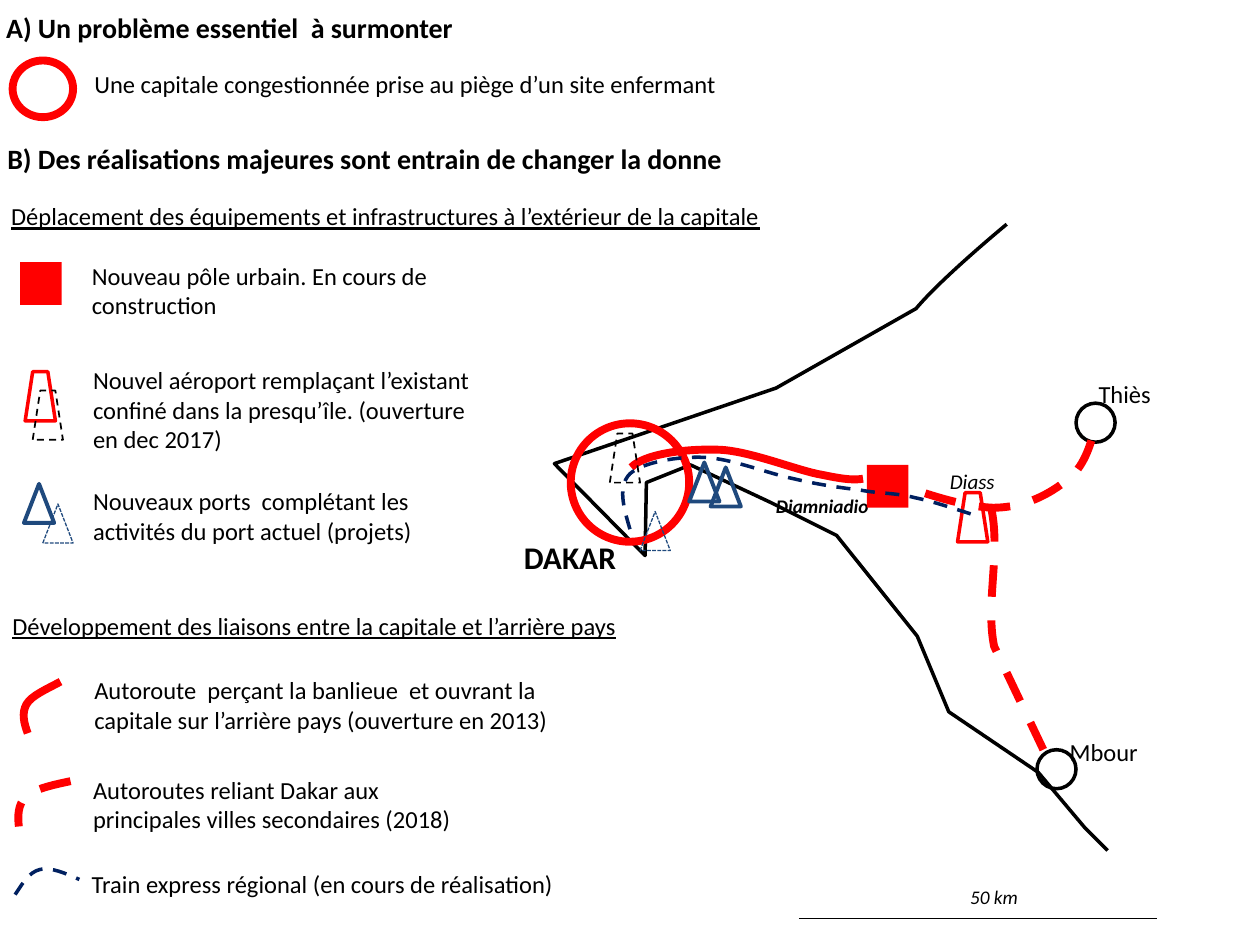
from lxml.etree import SubElement
from pptx import Presentation
from pptx.dml.color import RGBColor
from pptx.enum.dml import MSO_LINE
from pptx.enum.shapes import MSO_CONNECTOR, MSO_SHAPE
from pptx.enum.text import MSO_AUTO_SIZE
from pptx.oxml.ns import qn
from pptx.util import Inches, Pt

# The slide is a grid of 100 columns by 75 rows; all lengths are in cells
WIDTH, HEIGHT = Inches(10), Inches(7.5)
CELL = WIDTH / 100
COLORS = {"black": "000000", "red": "FF0000", "blue": "1F497D", "navy": "002060"}

# Line styles: colour, width in points, dash
COAST = ("black", 2, None)
ROAD = ("red", 4.5, None)
ROAD_DASH = ("red", 4.5, MSO_LINE.DASH)
TRAIN = ("navy", 2, MSO_LINE.DASH)
NEW_AIRPORT = ("red", 2, None)
OLD_AIRPORT = ("black", 1, MSO_LINE.DASH)
NEW_PORT = ("blue", 2.25, None)
OLD_PORT = ("blue", 0.75, MSO_LINE.SQUARE_DOT)
SCALE_BAR = ("black", 0.75, None)

# Symbols shared by the map and the legend: preset, width, height
CITY = (MSO_SHAPE.OVAL, 3.1, 3.1)
AIRPORT = (MSO_SHAPE.TRAPEZOID, 2.4, 3.9)
PORT = (MSO_SHAPE.ISOSCELES_TRIANGLE, 2.4, 3.1)
POLE = (MSO_SHAPE.RECTANGLE, 3.3, 3.4)


def cells(n):
    return round(n * CELL)


def rgb(name):
    return RGBColor.from_string(COLORS[name])


def style_line(line, style):
    color, width, dash = style
    line.color.rgb = rgb(color)
    line.width = Pt(width)
    if dash:
        line.dash_style = dash


def add_symbol(s, kind, x, y, style=None, fill=None):
    preset, w, h = kind
    sp = s.shapes.add_shape(preset, *map(cells, (x, y, w, h)))
    sp.shadow.inherit = False
    if fill:
        sp.fill.solid()
        sp.fill.fore_color.rgb = rgb(fill)
    else:
        sp.fill.background()
    if style:
        style_line(sp.line, style)
    else:
        sp.line.fill.background()


def bezier(p0, p1, p2, p3):
    """Points along a cubic curve, used to find its extent."""
    for i in range(21):
        t = i / 20
        u = 1 - t
        yield tuple(u**3 * a + 3 * u * u * t * b + 3 * u * t * t * c + t**3 * d
                    for a, b, c, d in zip(p0, p1, p2, p3))


def add_route(s, start, steps, style):
    """A step of 2 numbers is a straight line, one of 6 a cubic curve."""
    nodes = [start] + [step[-2:] for step in steps]
    builder = s.shapes.build_freeform(*map(cells, start))
    builder.add_line_segments([tuple(map(cells, n)) for n in nodes[1:]], close=False)
    sp = builder.convert_to_shape()

    # Fit the frame to the curves
    extent = list(nodes)
    for node, step in zip(nodes, steps):
        if len(step) == 6:
            extent.extend(bezier(node, step[:2], step[2:4], step[4:]))
    xs, ys = zip(*extent)
    sp.left, sp.top = cells(min(xs)), cells(min(ys))
    sp.width, sp.height = cells(max(xs) - min(xs)), cells(max(ys) - min(ys))

    # Write the outline with true curves
    outline = sp._element.spPr.find(".//" + qn("a:path"))
    for child in list(outline):
        outline.remove(child)
    outline.set("w", str(sp.width))
    outline.set("h", str(sp.height))
    tags = {2: "a:lnTo", 6: "a:cubicBezTo"}
    for tag, step in [("a:moveTo", start)] + [(tags[len(st)], st) for st in steps]:
        segment = SubElement(outline, qn(tag))
        for x, y in zip(step[::2], step[1::2]):
            SubElement(segment, qn("a:pt"), x=str(cells(x) - sp.left),
                       y=str(cells(y) - sp.top))
    sp.shadow.inherit = False
    sp.fill.background()
    style_line(sp.line, style)


def add_text(s, text, x, y, w, h, wrap=False, **fmt):
    tf = s.shapes.add_textbox(*map(cells, (x, y, w, h))).text_frame
    tf.word_wrap = wrap
    tf.auto_size = MSO_AUTO_SIZE.SHAPE_TO_FIT_TEXT
    r = tf.paragraphs[0].add_run()
    r.text = text
    font = {"name": "Calibri", "size": 14, **fmt}
    font["size"] = Pt(font["size"])
    for key, value in font.items():
        setattr(r.font, key, value)
    r.font.color.rgb = rgb("black")


def add_scale(s):
    cn = s.shapes.add_connector(MSO_CONNECTOR.STRAIGHT,
                                *map(cells, (63.4, 72.9, 91.8, 72.9)))
    style_line(cn.line, SCALE_BAR)
    SubElement(cn._element.spPr, qn("a:effectLst"))
    add_text(s, "50 km", 76, 69.8, 5.9, 2.9, size=11, italic=True)


def add_headings(s):
    add_text(s, "A) Un problème essentiel  à surmonter",
             -0.5, 0.35, 37.9, 3.7, size=16, bold=True)
    add_text(s, "B) Des réalisations majeures sont entrain de changer la donne",
             -0.4, 10.75, 61.2, 3.7, wrap=True, size=16, bold=True)
    add_text(s, "Déplacement des équipements et infrastructures à l’extérieur de la capitale",
             -0.1, 15.5, 61.4, 3.4, underline=True)
    add_text(s, "Développement des liaisons entre la capitale et l’arrière pays",
             0, 48, 50.4, 3.4, underline=True)


def add_legend(s):
    # Captions: text, column, row, width, lines
    for text, x, y, w, lines in (
        ("Une capitale congestionnée prise au piège d’un site enfermant", 6.5, 5, 51.9, 1),
        ("Nouveau pôle urbain. En cours de construction", 6.3, 20.2, 33.1, 2),
        ("Nouvel aéroport remplaçant l’existant confiné dans la presqu’île. "
         "(ouverture en dec 2017)", 6.4, 28.5, 32.3, 3),
        ("Nouveaux ports  complétant les activités du port actuel (projets)",
         6.4, 38.1, 27.9, 2),
        ("Autoroute  perçant la banlieue  et ouvrant la capitale sur l’arrière pays "
         "(ouverture en 2013)", 6.5, 53.1, 42.5, 2),
        ("Autoroutes reliant Dakar aux principales villes secondaires (2018)",
         6.4, 61, 33.5, 2),
        ("Train express régional (en cours de réalisation)", 6.3, 68.5, 39, 1),
    ):
        add_text(s, text, x, y, w, 1 + 2.36 * lines, wrap=lines > 1)

    # Keys
    add_symbol(s, (MSO_SHAPE.OVAL, 4.8, 4.5), 1, 4.8, ROAD)
    add_symbol(s, POLE, 1.6, 20.8, fill="red")
    add_symbol(s, AIRPORT, 2, 29.5, NEW_AIRPORT)
    add_symbol(s, AIRPORT, 2.6, 31, OLD_AIRPORT)
    add_symbol(s, PORT, 1.9, 38.4, NEW_PORT)
    add_symbol(s, PORT, 3.4, 40, OLD_PORT)
    add_route(s, (2.2, 58.2), [(1.9, 57.4, 1.7, 56.6, 2.1, 55.9),
                               (2.5, 55.2, 3.7, 54.7, 4.8, 54.1)], ROAD)
    add_route(s, (5.6, 62), [(4.2, 62.3, 2.8, 62.6, 2.1, 63.2),
                             (1.4, 63.8, 1.4, 64.8, 1.5, 65.6)], ROAD_DASH)
    add_route(s, (1.2, 71), [(1.8, 70.1, 2.3, 69.2, 3.2, 69),
                             (4, 68.8, 5.2, 69.3, 6.3, 69.8)], TRAIN)


def add_map(s):
    # Coast, towns and the new airport
    add_route(s, (87.9, 67.5), [
        (86.1, 65.7), (82.4, 61.3), (75.3, 56.5), (72.8, 50.5), (66.4, 42.5),
        (61.2, 39.9), (54.8, 36.9), (51.3, 38.3), (51.2, 44.1), (44, 36.8),
        (61.6, 30.8), (72.7, 24.5), (74.8, 22, 79.9, 17.8, 79.9, 17.8)], COAST)
    add_symbol(s, CITY, 85.4, 32, COAST)
    add_symbol(s, CITY, 82.3, 59.5, COAST)
    add_symbol(s, AIRPORT, 76, 39.1, NEW_AIRPORT)

    # Motorway and the congested capital
    add_route(s, (50.1, 37.1), [(51.2, 36, 54.5, 35.6, 57.1, 35.7),
                                (59.6, 35.8, 63.4, 37.4, 65.3, 37.7),
                                (67.2, 38.1, 67.9, 38.1, 68.5, 38)], ROAD)
    add_symbol(s, (MSO_SHAPE.OVAL, 9.4, 9.4), 45.3, 33.6, ROAD)
    add_symbol(s, AIRPORT, 48.4, 34.4, OLD_AIRPORT)

    # Place names
    add_text(s, "DAKAR", 40.6, 42.2, 9.4, 4, size=18, bold=True)
    add_text(s, "Diass", 74.4, 36.7, 5.6, 3, size=12, italic=True)
    add_text(s, "Thiès", 86.2, 29.6, 6.2, 3.4)
    add_text(s, "Mbour", 83.9, 58, 7.5, 3.4)
    add_text(s, "Diamniadio", 60.6, 38.7, 9.4, 2.9, size=11, bold=True, italic=True)

    # Planned motorways
    add_route(s, (69.3, 37.7), [(72.8, 39, 76.2, 40.2, 78.8, 40.3),
                                (81.4, 40.3, 83.3, 39.2, 84.7, 38.1),
                                (86, 37.1, 86.5, 35.5, 86.9, 34)], ROAD_DASH)
    add_route(s, (78.7, 40.5), [(79.4, 44, 78.2, 47.9, 78.9, 51.3),
                                (82.8, 59.5)], ROAD_DASH)

    # Ports, urban pole and regional train
    add_symbol(s, PORT, 50.8, 40.6, OLD_PORT)
    add_symbol(s, PORT, 54.7, 36.7, NEW_PORT)
    add_symbol(s, POLE, 68.8, 36.9, fill="red")
    add_route(s, (50, 42), [(49.5, 40.3, 49, 38.6, 50, 37.6),
                            (51, 36.7, 53.8, 36.2, 55.9, 36.3),
                            (58.1, 36.4, 61, 37.6, 63, 38),
                            (65.1, 38.5, 66.7, 38.7, 68.3, 38.9),
                            (69.9, 39.2, 71.1, 39.1, 72.6, 39.5),
                            (74.1, 39.8, 75.8, 40.4, 77.4, 40.9)], TRAIN)
    add_symbol(s, PORT, 56.4, 37.1, NEW_PORT)


def main():
    prs = Presentation()
    prs.slide_width, prs.slide_height = WIDTH, HEIGHT
    s = prs.slides.add_slide(prs.slide_layouts[6])
    add_headings(s)
    add_legend(s)
    add_map(s)
    add_scale(s)
    prs.save("out.pptx")


if __name__ == "__main__":
    main()
